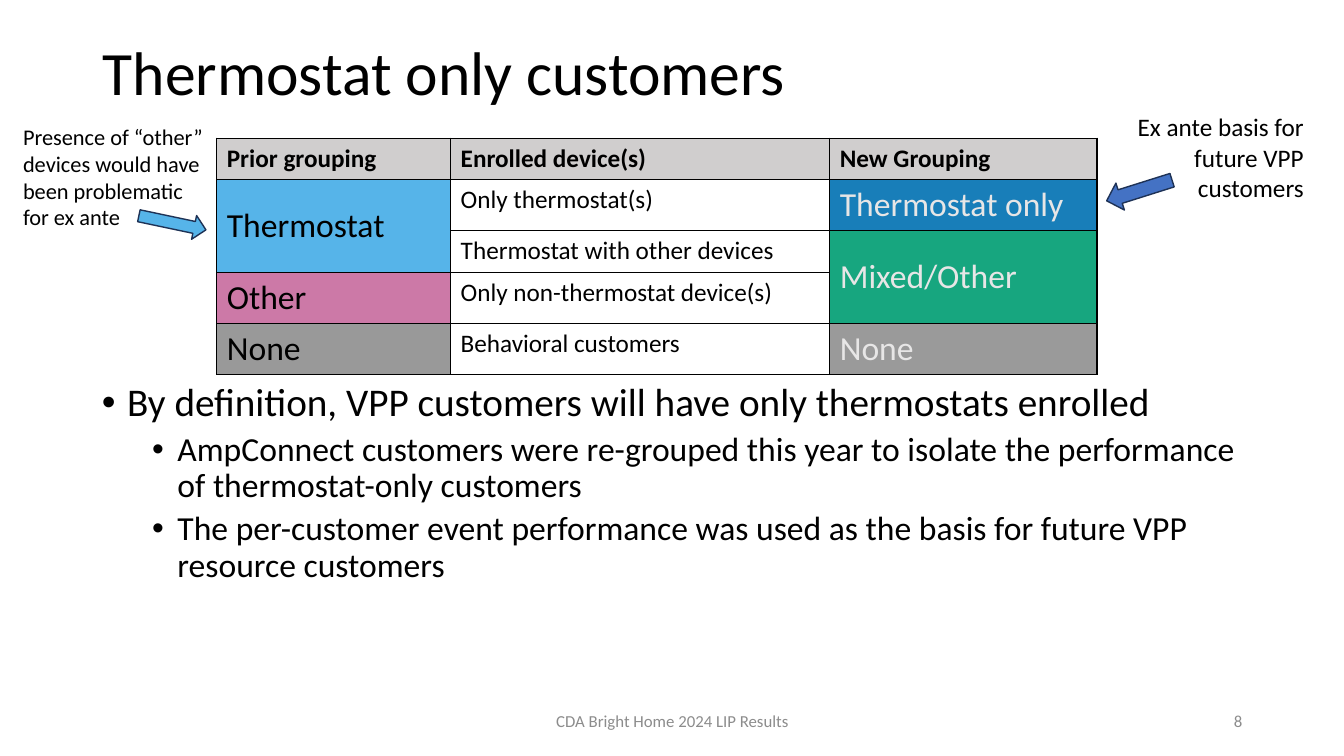
from lxml import etree
from pptx import Presentation
from pptx import util as u
from pptx.dml.color import RGBColor
from pptx.enum import shapes, text
from pptx.oxml import ns

PX = 9144  # 100 px to the inch
BLACK = RGBColor(0x00, 0x00, 0x00)
PALE = RGBColor(0xE7, 0xE6, 0xE6)
MUTED = RGBColor(0x8C, 0x8C, 0x8C)
HEAD = RGBColor(0xD0, 0xCE, 0xCE)
SKY = RGBColor(0x56, 0xB4, 0xE9)
PINK = RGBColor(0xCC, 0x79, 0xA7)
GRAY = RGBColor(0x99, 0x99, 0x99)
STEEL = RGBColor(0x9A, 0x9A, 0x9A)
BLUE = RGBColor(0x18, 0x7E, 0xB9)
GREEN = RGBColor(0x17, 0xA6, 0x7F)
ROYAL = RGBColor(0x44, 0x72, 0xC4)
NAVY = RGBColor(0x1E, 0x32, 0x56)

LEFT, MID, RIGHT = text.PP_ALIGN.LEFT, text.PP_ALIGN.CENTER, text.PP_ALIGN.RIGHT
TOP, CENTER = text.MSO_ANCHOR.TOP, text.MSO_ANCHOR.MIDDLE

COLS = (232, 376, 265)
ROWS = (41, 51, 41, 51, 51)
HEADS = ("Prior grouping", "Enrolled device(s)", "New Grouping")
DEVICES = ("Only thermostat(s)", "Thermostat with other devices",
           "Only non-thermostat device(s)", "Behavioral customers")
# row, column, rows spanned, label, fill, text colour
GROUPS = (
    (1, 0, 2, "Thermostat", SKY, BLACK),
    (3, 0, 1, "Other", PINK, BLACK),
    (4, 0, 1, "None", GRAY, BLACK),
    (1, 2, 1, "Thermostat only", BLUE, PALE),
    (2, 2, 2, "Mixed/Other", GREEN, PALE),
    (4, 2, 1, "None", STEEL, PALE),
)
POINTS = (
    (0, "By definition, VPP customers will have only thermostats enrolled"),
    (1, "AmpConnect customers were re-grouped this year to isolate the "
        "performance of thermostat-only customers"),
    (1, "The per-customer event performance was used as the basis for "
        "future VPP resource customers"),
)


def scale(box):
    return [n * PX for n in box]


def write(para, words, size, color=BLACK, align=LEFT, bold=False):
    para.text = words
    para.alignment = align
    font = para.font
    font.name, font.size, font.bold = "Calibri", u.Pt(size), bold
    font.color.rgb = color


def place(holder, box, anchor):
    holder.left, holder.top, holder.width, holder.height = scale(box)
    frame = holder.text_frame
    frame.auto_size = text.MSO_AUTO_SIZE.NONE
    frame.vertical_anchor = anchor
    return frame


def title(slide, box):
    para = place(slide.shapes.title, box, CENTER).paragraphs[0]
    write(para, "Thermostat only customers", 44)
    para.line_spacing = 0.9


def bullets(slide, box):
    frame = place(slide.placeholders[1], box, TOP)
    for i, (level, words) in enumerate(POINTS):
        para = frame.add_paragraph() if i else frame.paragraphs[0]
        write(para, words, 24 if level else 28)
        para.level = level
        para.line_spacing = 0.9
        para.space_before = u.Pt(5 if level else 10)
        props = para._p.get_or_add_pPr()
        props.set("marL", str((75 if level else 25) * PX))
        props.set("indent", str(-25 * PX))
        mark = etree.Element(ns.qn("a:buChar"), char="•")
        props.find(ns.qn("a:defRPr")).addprevious(mark)


def label(slide, box, words, size, color=BLACK, align=LEFT, anchor=TOP):
    frame = slide.shapes.add_textbox(*scale(box)).text_frame
    frame.word_wrap = True
    frame.vertical_anchor = anchor
    write(frame.paragraphs[0], words, size, color, align)


def border(cell):
    props = cell._tc.get_or_add_tcPr()
    for side in ("lnL", "lnR", "lnT", "lnB"):
        line = etree.SubElement(props, ns.qn("a:" + side), w=str(u.Pt(1)))
        fill = etree.SubElement(line, ns.qn("a:solidFill"))
        etree.SubElement(fill, ns.qn("a:srgbClr"), val=str(BLACK))


def paint(cell, fill):
    cell.fill.solid()
    cell.fill.fore_color.rgb = fill


def table(slide, left, top):
    box = scale((left, top, sum(COLS), sum(ROWS)))
    grid = slide.shapes.add_table(len(ROWS), len(COLS), *box).table
    grid.first_row = grid.horz_banding = False
    for col, wide in zip(grid.columns, COLS):
        col.width = wide * PX
    for row, high in zip(grid.rows, ROWS):
        row.height = high * PX
    for cell in grid.iter_cells():
        border(cell)
        cell.fill.background()
    for col, words in enumerate(HEADS):
        cell = grid.cell(0, col)
        paint(cell, HEAD)
        write(cell.text_frame.paragraphs[0], words, 18, bold=True)
    for row, words in enumerate(DEVICES, 1):
        write(grid.cell(row, 1).text_frame.paragraphs[0], words, 18)
    for row, col, span, words, fill, color in GROUPS:
        cell = grid.cell(row, col)
        if span > 1:
            cell.merge(grid.cell(row + span - 1, col))
        paint(cell, fill)
        cell.vertical_anchor = CENTER
        write(cell.text_frame.paragraphs[0], words, 24, color)


def arrow(slide, box, turn, fill):
    shape = slide.shapes.add_shape(shapes.MSO_SHAPE.DOWN_ARROW, *scale(box))
    shape.rotation = turn
    shape.shadow.inherit = False
    shape.fill.solid()
    shape.fill.fore_color.rgb = fill
    shape.line.color.rgb = NAVY
    shape.line.width = u.Pt(1)


def footer(slide, top, high):
    label(slide, (442, top, 450, high), "CDA Bright Home 2024 LIP Results",
          12, MUTED, MID, CENTER)
    label(slide, (942, top, 300, high), "8", 12, MUTED, RIGHT, CENTER)


def main():
    deck = Presentation()
    deck.slide_width, deck.slide_height = scale((1333, 750))
    slide = deck.slides.add_slide(deck.slide_layouts[1])
    title(slide, (92, 15, 1150, 119))
    footer(slide, 695, 40)
    table(slide, 215, 137)
    bullets(slide, (91, 375, 1150, 298))
    arrow(slide, (1116, 155, 28, 68), 72.5, ROYAL)
    label(slide, (1096, 106, 207, 101),
          "Ex ante basis for future VPP customers", 18, align=RIGHT)
    arrow(slide, (159, 187, 24, 68), 281.9, SKY)
    label(slide, (13, 117, 201, 118),
          "Presence of “other” devices would have been problematic for ex ante", 16)
    deck.save("out.pptx")


if __name__ == "__main__":
    main()
